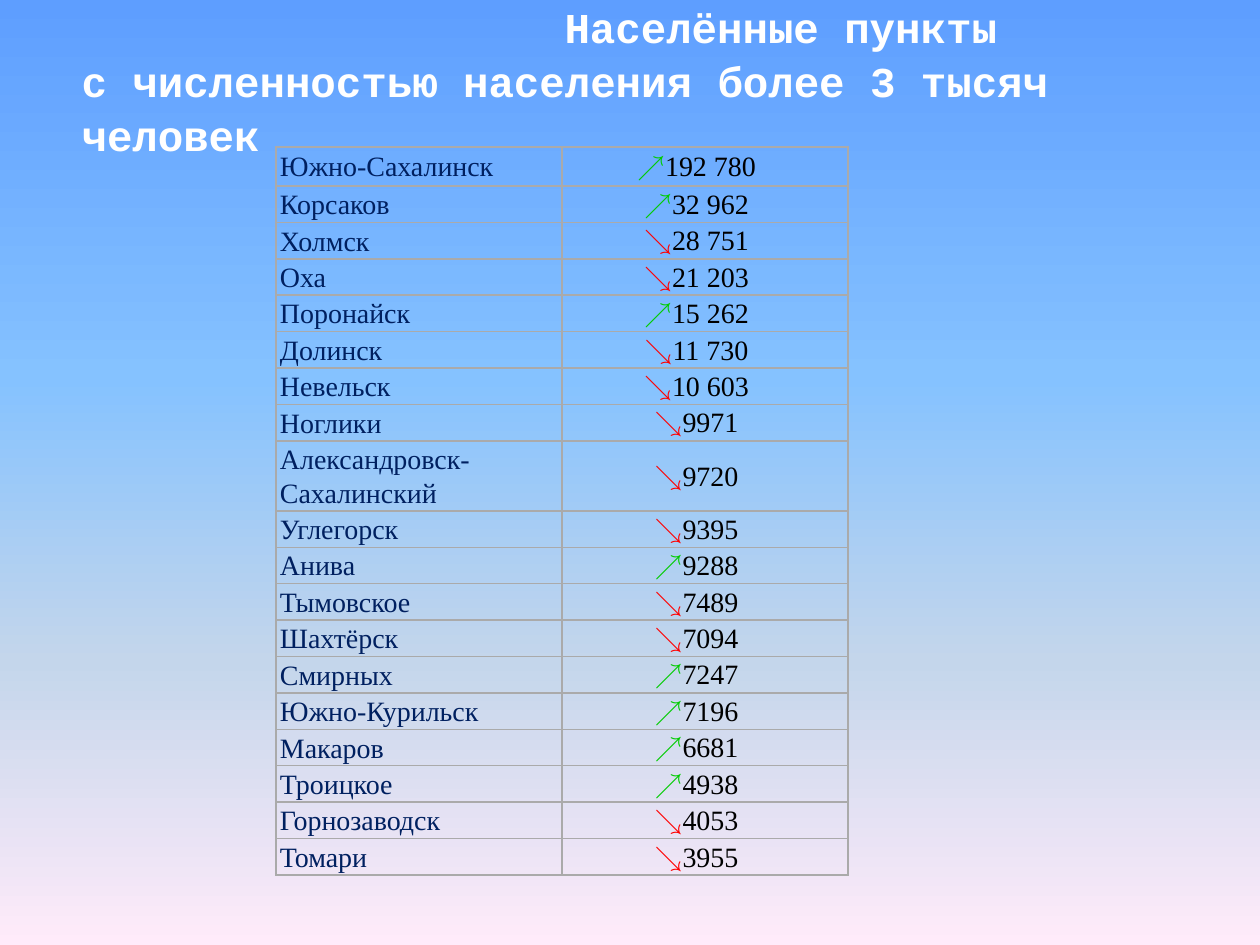
from lxml.etree import SubElement
from pptx import Presentation
from pptx.dml.color import RGBColor
from pptx.enum.text import MSO_ANCHOR, MSO_AUTO_SIZE, PP_ALIGN
from pptx.oxml.ns import qn
from pptx.util import Pt

PX = 914400 // 126
COLORS = {
    "title": "FFFFFF", "town": "002060", "number": "000000",
    "↗": "00CC00", "↘": "FF0000", "border": "AAAAAA",
}
SKY = [(0, "5E9EFF"), (40, "85C2FF"), (70, "C4D6EB"), (100, "FFEBFA")]
TOWNS = [
    ("Южно-Сахалинск", "↗", "192 780"),
    ("Корсаков", "↗", "32 962"),
    ("Холмск", "↘", "28 751"),
    ("Оха", "↘", "21 203"),
    ("Поронайск", "↗", "15 262"),
    ("Долинск", "↘", "11 730"),
    ("Невельск", "↘", "10 603"),
    ("Ноглики", "↘", "9971"),
    ("Александровск-Сахалинский", "↘", "9720"),
    ("Углегорск", "↘", "9395"),
    ("Анива", "↗", "9288"),
    ("Тымовское", "↘", "7489"),
    ("Шахтёрск", "↘", "7094"),
    ("Смирных", "↗", "7247"),
    ("Южно-Курильск", "↗", "7196"),
    ("Макаров", "↗", "6681"),
    ("Троицкое", "↗", "4938"),
    ("Горнозаводск", "↘", "4053"),
    ("Томари", "↘", "3955"),
]
ROW_HEIGHTS = {0: 39, 8: 70}


def set_font(font, name, size, color, bold=False):
    font.name, font.size, font.bold = name, Pt(size), bold
    font.color.rgb = RGBColor.from_string(COLORS[color])


def prepare_cell(cell, right_margin):
    """Clear the fill, set margins and borders, and return the first paragraph."""
    cell.fill.background()
    cell.vertical_anchor = MSO_ANCHOR.MIDDLE
    cell.margin_left, cell.margin_right = 4 * PX, right_margin * PX
    cell.margin_top = cell.margin_bottom = PX
    props = cell._tc.get_or_add_tcPr()
    for position, side in enumerate(("a:lnL", "a:lnR", "a:lnT", "a:lnB")):
        line = SubElement(props, qn(side), w=str(Pt(1)))
        fill = SubElement(line, qn("a:solidFill"))
        SubElement(fill, qn("a:srgbClr"), val=COLORS["border"])
        props.insert(position, line)
    paragraph = cell.text_frame.paragraphs[0]
    paragraph.line_spacing = 1.07
    return paragraph


prs = Presentation()
prs.slide_width, prs.slide_height = 1260 * PX, 945 * PX
slide = prs.slides.add_slide(prs.slide_layouts[5])

# Background
sky_fill = slide.background.fill
sky_fill.gradient()
sky_fill.gradient_angle = 270
stops = slide.element.find(".//" + qn("a:gsLst"))
for old_stop in list(stops):
    stops.remove(old_stop)
for percent, color in SKY:
    stop = SubElement(stops, qn("a:gs"), pos=str(percent * 1000))
    SubElement(stop, qn("a:srgbClr"), val=color)

# Title, with the first line indented
title = slide.shapes.title
title.left, title.top, title.width, title.height = (v * PX for v in (69, 3, 1134, 153))
heading = title.text_frame
heading.word_wrap = True
heading.auto_size = MSO_AUTO_SIZE.NONE
heading.vertical_anchor = MSO_ANCHOR.MIDDLE
heading.margin_top = heading.margin_bottom = 0
heading.text = "Населённые пункты \vс численностью населения более 3 тысяч человек"
heading_line = heading.paragraphs[0]
heading_line.alignment = PP_ALIGN.LEFT
heading_line.line_spacing = 1.06
heading_line._p.get_or_add_pPr().set("indent", str(483 * PX))
set_font(heading_line.font, "Courier New", 24.3, "title", True)

# Population table
heights = [ROW_HEIGHTS.get(index, 36) for index in range(len(TOWNS))]
population = slide.shapes.add_table(
    len(TOWNS), 2, 276 * PX, 147 * PX, 572 * PX, sum(heights) * PX).table
population.first_row = population.horz_banding = False
for column in population.columns:
    column.width = 286 * PX
for row, height, (town, trend, number) in zip(population.rows, heights, TOWNS):
    row.height = height * PX
    town_cell, number_cell = row.cells

    town_line = prepare_cell(town_cell, 4)
    town_line.text = town
    set_font(town_line.font, "Times New Roman", 16, "town")

    number_line = prepare_cell(number_cell, 21)
    number_line.alignment = PP_ALIGN.CENTER
    for text, font_name, color, bold in (
            (trend, "Cambria", trend, True),
            (number, "Times New Roman", "number", False)):
        run = number_line.add_run()
        run.text = text
        set_font(run.font, font_name, 16, color, bold)

prs.save("out.pptx")
